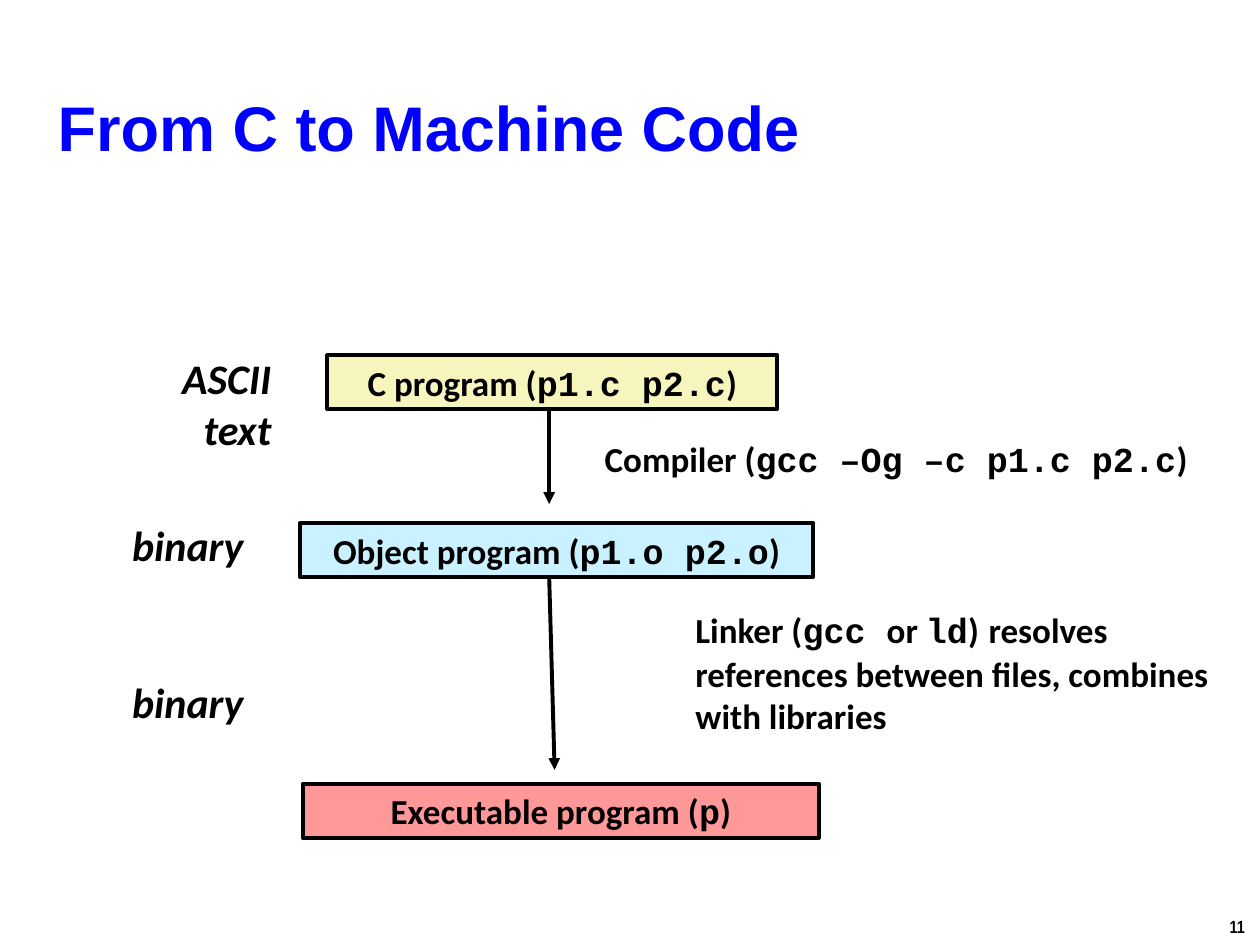
from collections import namedtuple
from dataclasses import dataclass

from lxml.etree import SubElement
from pptx import Presentation
from pptx.dml.color import RGBColor
from pptx.enum.shapes import MSO_CONNECTOR, MSO_SHAPE
from pptx.enum.text import MSO_ANCHOR, MSO_AUTO_SIZE, PP_ALIGN
from pptx.oxml.ns import qn
from pptx.util import Cm, Pt

Box = namedtuple("Box", "x y w h")
Style = namedtuple("Style", "font size color italic", defaults=("000000", False))


@dataclass(frozen=True)
class Theme:
    title: Style = Style("Arial", 36, "0000FF")
    body: Style = Style("Calibri", 20)
    code: Style = Style("Courier New", 20)
    gap: Style = Style("Arial Narrow", 24)
    form: Style = Style("Calibri", 24, italic=True)
    number: Style = Style("Arial Narrow", 10)
    ink: str = "000000"
    line: float = 2.25
    source: str = "F6F5BD"
    object: str = "C9F1FF"
    executable: str = "FF9999"


THEME = Theme()


def rgb(value):
    return RGBColor.from_string(value)


def inside(area, x, y, w, h):
    return Box(area.x + x, area.y + y, w, h)


def lengths(box):
    return [Cm(v) for v in box]


def add_runs(p, runs):
    for text, style in runs:
        r = p.add_run()
        r.text = text
        r.font.name = style.font
        r.font.size = Pt(style.size)
        r.font.bold = True
        r.font.italic = style.italic
        r.font.color.rgb = rgb(style.color)


def code_runs(before, code):
    return [(before + " (", THEME.body), (code, THEME.code), (")", THEME.body)]


def add_text(s, box, runs, align=PP_ALIGN.LEFT, wrap=True):
    tf = s.shapes.add_textbox(*lengths(box)).text_frame
    tf.word_wrap = wrap
    p = tf.paragraphs[0]
    p.alignment = align
    add_runs(p, runs)
    return p


def set_indent(p, left, first=0):
    pPr = p._p.get_or_add_pPr()
    pPr.set("marL", str(Cm(left)))
    pPr.set("indent", str(Cm(first)))


def add_stage(s, box, fill, runs):
    sp = s.shapes.add_shape(MSO_SHAPE.RECTANGLE, *lengths(box))
    sp.shadow.inherit = False
    sp.fill.solid()
    sp.fill.fore_color.rgb = rgb(fill)
    sp.line.color.rgb = rgb(THEME.ink)
    sp.line.width = Pt(THEME.line)
    tf = sp.text_frame
    tf.word_wrap = True
    tf.vertical_anchor = MSO_ANCHOR.TOP
    p = tf.paragraphs[0]
    p.alignment = PP_ALIGN.CENTER
    add_runs(p, runs)


def add_arrow(s, area, x1, y1, x2, y2):
    ends = [Cm(v) for v in (area.x + x1, area.y + y1, area.x + x2, area.y + y2)]
    cxn = s.shapes.add_connector(MSO_CONNECTOR.STRAIGHT, *ends)
    cxn.line.color.rgb = rgb(THEME.ink)
    cxn.line.width = Pt(THEME.line)
    SubElement(cxn.line._get_or_add_ln(), qn("a:tailEnd"), type="triangle")
    SubElement(cxn._element.spPr, qn("a:effectLst"))


def add_title(s, box):
    sp = s.shapes.title
    sp.left, sp.top, sp.width, sp.height = lengths(box)
    tf = sp.text_frame
    tf.auto_size = MSO_AUTO_SIZE.NONE
    tf.vertical_anchor = MSO_ANCHOR.MIDDLE
    p = tf.paragraphs[0]
    p.alignment = PP_ALIGN.LEFT
    set_indent(p, 0.33, -0.33)
    add_runs(p, [("From C to Machine Code", THEME.title)])


def add_forms(s, area):
    for text, y, w, h in (
        ("ASCII text", 0, 3.33, 2.31),
        ("binary", 3.35, 2.77, 1.27),
        ("binary", 6.52, 2.77, 1.27),
    ):
        add_text(s, inside(area, 0, y, w, h), [(text, THEME.form)], PP_ALIGN.RIGHT)


def add_stages(s, area):
    for name, files, fill, x, y, w in (
        ("C program", "p1.c p2.c", THEME.source, 0.55, 0, 9.07),
        ("Object program", "p1.o p2.o", THEME.object, 0, 3.38, 10.34),
        ("Executable program", "p", THEME.executable, 0.05, 8.64, 10.41),
    ):
        add_stage(s, inside(area, x, y, w, 1.09), fill, code_runs(name, files))
    add_arrow(s, area, 5.02, 1.12, 5.02, 3)
    add_arrow(s, area, 5.02, 4.45, 5.13, 8.36)


def add_tools(s, area):
    add_text(s, inside(area, 0, 0, 12.83, 1.09),
             code_runs("Compiler", "gcc –Og –c p1.c p2.c"))
    p = add_text(s, inside(area, 0.56, 3.32, 12.27, 3.84), [
        ("Linker (", THEME.body),
        ("gcc ", THEME.code),
        ("or ", THEME.body),
        ("ld", THEME.code),
        (")", THEME.body),
        (" ", THEME.gap),
        ("resolves references between files, combines with libraries", THEME.body),
    ])
    p.level = 1
    set_indent(p, 1.27)


def add_number(s, box):
    add_text(s, box, [("11", THEME.number)], wrap=False)


def main():
    prs = Presentation()
    prs.slide_width, prs.slide_height = Cm(25.4), Cm(19.05)
    s = prs.slides.add_slide(prs.slide_layouts[5])
    add_title(s, Box(0.91, 1.75, 19.43, 1.6))
    add_forms(s, Box(2.39, 6.99, 3.33, 7.79))
    add_stages(s, Box(6.05, 7.16, 10.46, 9.73))
    add_tools(s, Box(11.94, 8.69, 12.83, 7.16))
    add_number(s, Box(24.54, 18.34, 0.86, 0.69))
    prs.save("out.pptx")


if __name__ == "__main__":
    main()
